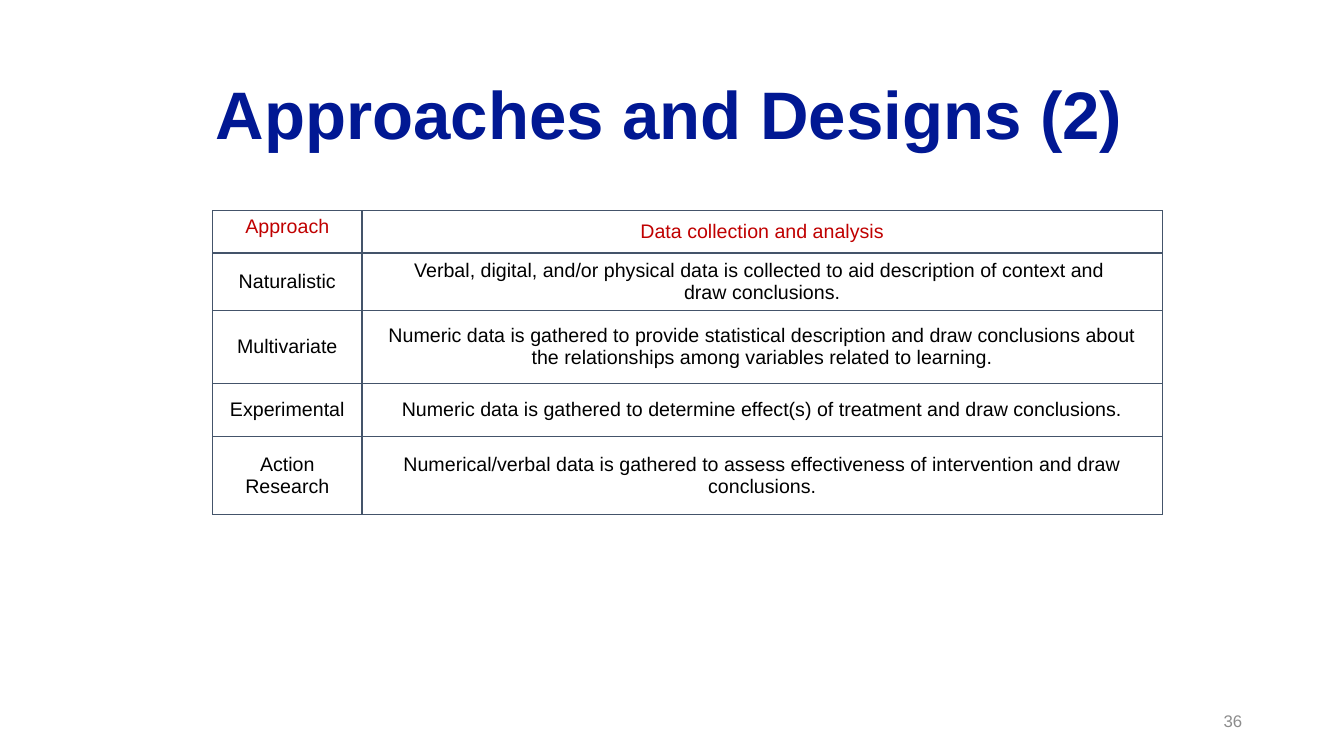
from lxml import etree
from pptx import Presentation
from pptx import util as u
from pptx.dml.color import RGBColor
from pptx.enum import text
from pptx.oxml.ns import qn

FONT = "Arial"
NAVY, RED, BLACK, GREY, SLATE = "011893", "C00000", "000000", "8C8C8C", "44546A"
TITLE = "Approaches and Designs (2)"
PAGE_NUMBER = "36"
ROWS = [
    ("Approach", "Data collection and analysis"),
    ("Naturalistic", "Verbal, digital, and/or physical data is collected to aid "
                     "description of context and \ndraw conclusions."),
    ("Multivariate", "Numeric data is gathered to provide statistical description and draw "
                     "conclusions about the relationships among variables related to learning."),
    ("Experimental", "Numeric data is gathered to determine effect(s) of treatment "
                     "and draw conclusions."),
    ("Action Research", "Numerical/verbal data is gathered to assess effectiveness of "
                        "intervention and draw conclusions."),
]
COLUMN_WIDTHS = [1.48, 7.94]
SIDE_MARGINS = [0.1, 0.15]
ROW_HEIGHTS = [0.42, 0.52, 0.73, 0.52, 0.78]
TABLE_LEFT, TABLE_TOP = 2.11, 2.09


def color(value):
    return RGBColor.from_string(value)


def write(frame, words, size, ink, align, bold=False, spacing=None):
    frame.text = words
    for para in frame.paragraphs:
        para.alignment = align
        if spacing:
            para.line_spacing = spacing
        for span in para.runs:
            span.font.name = FONT
            span.font.size = u.Pt(size)
            span.font.bold = bold
            span.font.color.rgb = color(ink)


def add_text(page, place, *style, **options):
    box = page.shapes.add_textbox(*map(u.Inches, place))
    box.text_frame.word_wrap = True
    box.text_frame.vertical_anchor = text.MSO_ANCHOR.MIDDLE
    write(box.text_frame, *style, **options)


def add_borders(cell, ink, points):
    properties = cell._tc.get_or_add_tcPr()
    for side in ("a:lnL", "a:lnR", "a:lnT", "a:lnB"):
        line = etree.SubElement(properties, qn(side), w=str(u.Pt(points)))
        fill = etree.SubElement(line, qn("a:solidFill"))
        etree.SubElement(fill, qn("a:srgbClr"), val=ink)


def add_approach_table(page):
    frame = page.shapes.add_table(
        len(ROWS), len(COLUMN_WIDTHS), u.Inches(TABLE_LEFT), u.Inches(TABLE_TOP),
        u.Inches(sum(COLUMN_WIDTHS)), u.Inches(sum(ROW_HEIGHTS)))
    table = frame.table
    table.first_row = table.horz_banding = False
    for column, width in zip(table.columns, COLUMN_WIDTHS):
        column.width = u.Inches(width)
    for row, height in zip(table.rows, ROW_HEIGHTS):
        row.height = u.Inches(height)
    for r, words in enumerate(ROWS):
        for c, entry in enumerate(words):
            cell = table.cell(r, c)
            add_borders(cell, SLATE, 1)
            cell.fill.background()
            cell.margin_left = cell.margin_right = u.Inches(SIDE_MARGINS[c])
            cell.vertical_anchor = text.MSO_ANCHOR.MIDDLE
            write(cell.text_frame, entry, 14, BLACK if r else RED, text.PP_ALIGN.CENTER)
    table.cell(0, 0).vertical_anchor = text.MSO_ANCHOR.TOP


def main():
    deck = Presentation()
    deck.slide_width, deck.slide_height = u.Inches(13.33), u.Inches(7.5)
    page = deck.slides.add_slide(deck.slide_layouts[6])
    add_text(page, (9.42, 6.95, 3, 0.4), PAGE_NUMBER, 12, GREY, text.PP_ALIGN.RIGHT)
    add_text(page, (1.88, 0.61, 9.52, 1.11), TITLE, 48, NAVY, text.PP_ALIGN.CENTER,
             bold=True, spacing=0.9)
    add_approach_table(page)
    deck.save("out.pptx")


if __name__ == "__main__":
    main()
